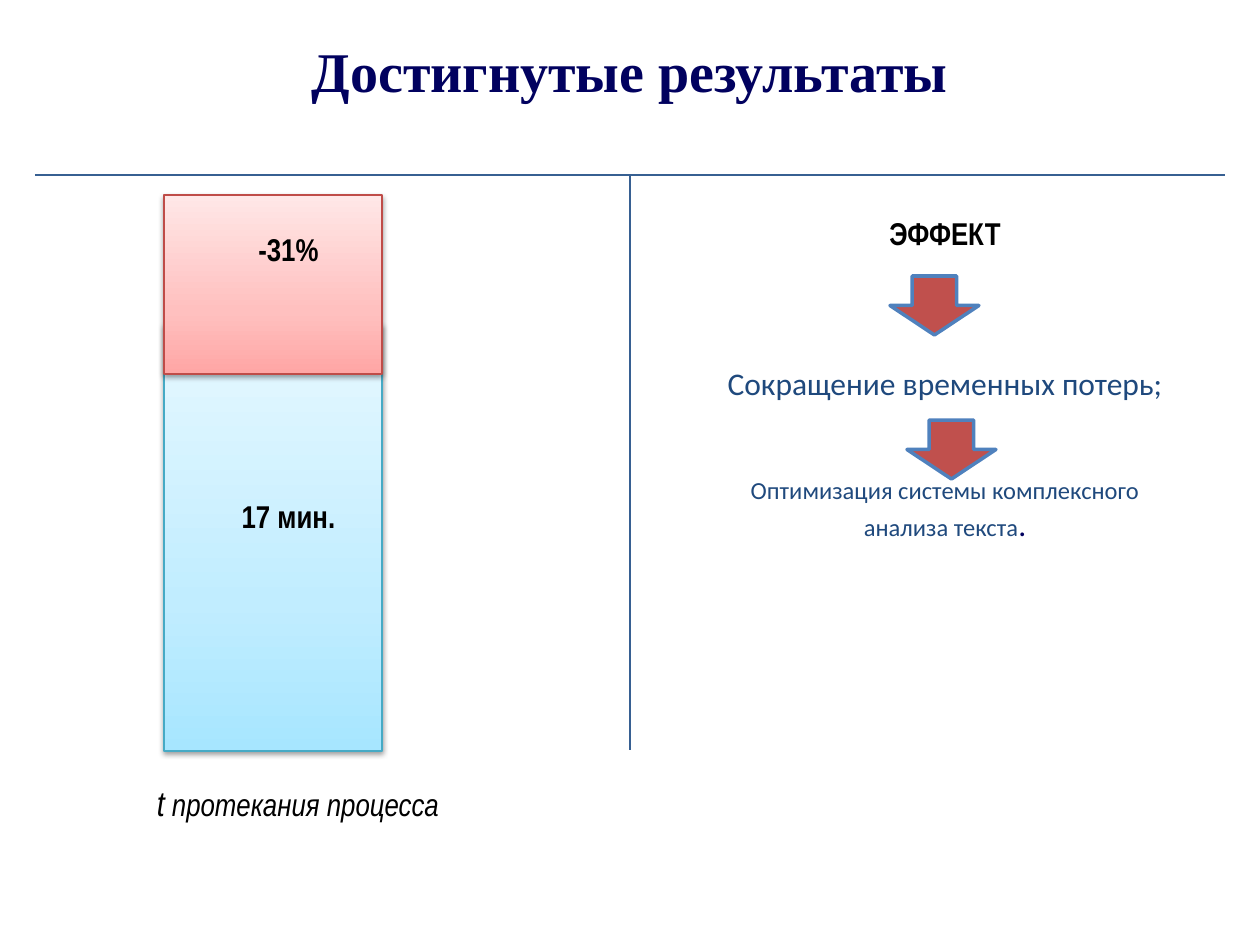
from copy import deepcopy

from lxml import etree
from pptx import Presentation
from pptx.dml.color import RGBColor
from pptx.enum.shapes import MSO_CONNECTOR, MSO_SHAPE
from pptx.enum.text import MSO_ANCHOR, PP_ALIGN
from pptx.oxml import parse_xml
from pptx.oxml.ns import nsdecls, qn
from pptx.util import Emu, Pt

RECTANGLE, DOWN_ARROW = MSO_SHAPE.RECTANGLE, MSO_SHAPE.DOWN_ARROW
STRAIGHT = MSO_CONNECTOR.STRAIGHT
CENTER = PP_ALIGN.CENTER
MIDDLE = MSO_ANCHOR.MIDDLE
TITLE_ONLY = 5
EMU_PER_PX = 914400 / 126

COLORS = {
    "navy": "01015F",
    "blue_text": "1F497D",
    "black": "000000",
    "divider": "376092",
    "arrow_fill": "C0504D",
    "arrow_line": "4F81BD",
    "time_line": "46AAC5",
    "saving_line": "BF4C48",
    "time_start": "A7E6FF",
    "time_middle": "C1EDFF",
    "time_end": "E7F8FF",
    "saving_start": "FFA6A5",
    "saving_middle": "FFC0BF",
    "saving_end": "FFE7E7",
}

BAR_SHADOW = f"""<a:effectLst {nsdecls('a')}>
  <a:outerShdw blurRad="40000" dist="20000" dir="5400000" rotWithShape="0">
    <a:srgbClr val="{COLORS['black']}"><a:alpha val="38000"/></a:srgbClr>
  </a:outerShdw>
</a:effectLst>"""


def px(*lengths):
    return [Emu(round(length * EMU_PER_PX)) for length in lengths]


def color(name):
    return RGBColor.from_string(COLORS[name])


def format_font(font, size, name, color_name, bold=False, italic=False):
    font.size, font.name = Pt(size), name
    font.bold, font.italic = bold, italic
    font.color.rgb = color(color_name)


def add_title(slide, text):
    title = slide.shapes.title
    title.left, title.top, title.width, title.height = px(15, 26, 1230, 89)
    title.text_frame.vertical_anchor = MIDDLE
    title.text_frame.text = text
    paragraph = title.text_frame.paragraphs[0]
    paragraph.alignment = CENTER
    format_font(paragraph.font, 32, "Times New Roman", "navy", bold=True)


def add_divider(slide, *ends):
    line = slide.shapes.add_connector(STRAIGHT, *px(*ends))
    line.line.color.rgb = color("divider")
    line.line.width = Pt(1.5)
    etree.SubElement(line._element.spPr, qn("a:effectLst"))


def add_bar(slide, top, height, kind):
    """Add a bar segment whose gradient runs from the bottom up."""
    bar = slide.shapes.add_shape(RECTANGLE, *px(164, top, 218, height))
    bar.fill.gradient()
    bar.fill.gradient_angle = 90
    stop_list = bar._element.spPr.find(qn("a:gradFill")).find(qn("a:gsLst"))
    stop_list.append(deepcopy(stop_list[-1]))
    stops = zip(bar.fill.gradient_stops, (0, 0.35, 1), ("start", "middle", "end"))
    for stop, position, part in stops:
        stop.position = position
        stop.color.rgb = color(f"{kind}_{part}")
    bar.line.color.rgb = color(f"{kind}_line")
    bar.line.width = Pt(0.75)
    bar._element.spPr.append(parse_xml(BAR_SHADOW))


def add_arrow(slide, left, top):
    arrow = slide.shapes.add_shape(DOWN_ARROW, *px(left, top, 89, 59))
    arrow.shadow.inherit = False
    arrow.fill.solid()
    arrow.fill.fore_color.rgb = color("arrow_fill")
    arrow.line.color.rgb = color("arrow_line")
    arrow.line.width = Pt(2)


def add_text_box(slide, *box):
    text_frame = slide.shapes.add_textbox(*px(*box)).text_frame
    text_frame.word_wrap = True
    text_frame.paragraphs[0].alignment = CENTER
    return text_frame


def add_bar_label(slide, top, text):
    paragraph = add_text_box(slide, 194, top, 189, 50).paragraphs[0]
    paragraph.text = text
    format_font(paragraph.font, 18, "Arial Narrow", "black", bold=True)


def add_caption(slide):
    paragraph = add_text_box(slide, 134, 775, 328, 55).paragraphs[0]
    format_font(paragraph.font, 18, "Arial Narrow", "black", italic=True)
    for text, size in (("t", 20), (" протекания процесса", 18)):
        run = paragraph.add_run()
        run.text = text
        format_font(run.font, size, "Arial Narrow", "black", italic=True)


def add_effects(slide):
    text_frame = add_text_box(slide, 697, 208, 496, 496)
    heading = text_frame.paragraphs[0]
    heading.text = "ЭФФЕКТ"
    format_font(heading.font, 18, "Arial Narrow", "black", bold=True)

    effects = (
        ("Сокращение временных потерь;", 18, 64),
        ("Оптимизация системы комплексного анализа текста", 14, 42),
    )
    for text, size, space in effects:
        paragraph = text_frame.add_paragraph()
        paragraph.text = text
        paragraph.alignment = CENTER
        paragraph.space_before = Pt(space)
        format_font(paragraph.font, size, "Calibri", "blue_text")

    full_stop = paragraph.add_run()
    full_stop.text = "."
    format_font(full_stop.font, 18, "Calibri", "navy")


def main():
    presentation = Presentation()
    presentation.slide_width, presentation.slide_height = px(1260, 945)
    slide = presentation.slides.add_slide(presentation.slide_layouts[TITLE_ONLY])

    add_bar(slide, 324, 427, "time")
    add_title(slide, "Достигнутые результаты")
    add_effects(slide)
    add_divider(slide, 35, 175, 1225, 175)
    add_divider(slide, 630, 175, 630, 750)
    add_arrow(slide, 890, 276)
    add_arrow(slide, 907, 420)
    add_bar(slide, 195, 179, "saving")
    add_bar_label(slide, 224, "-31%")
    add_bar_label(slide, 491, "17 мин.")
    add_caption(slide)

    presentation.save("out.pptx")


if __name__ == "__main__":
    main()
